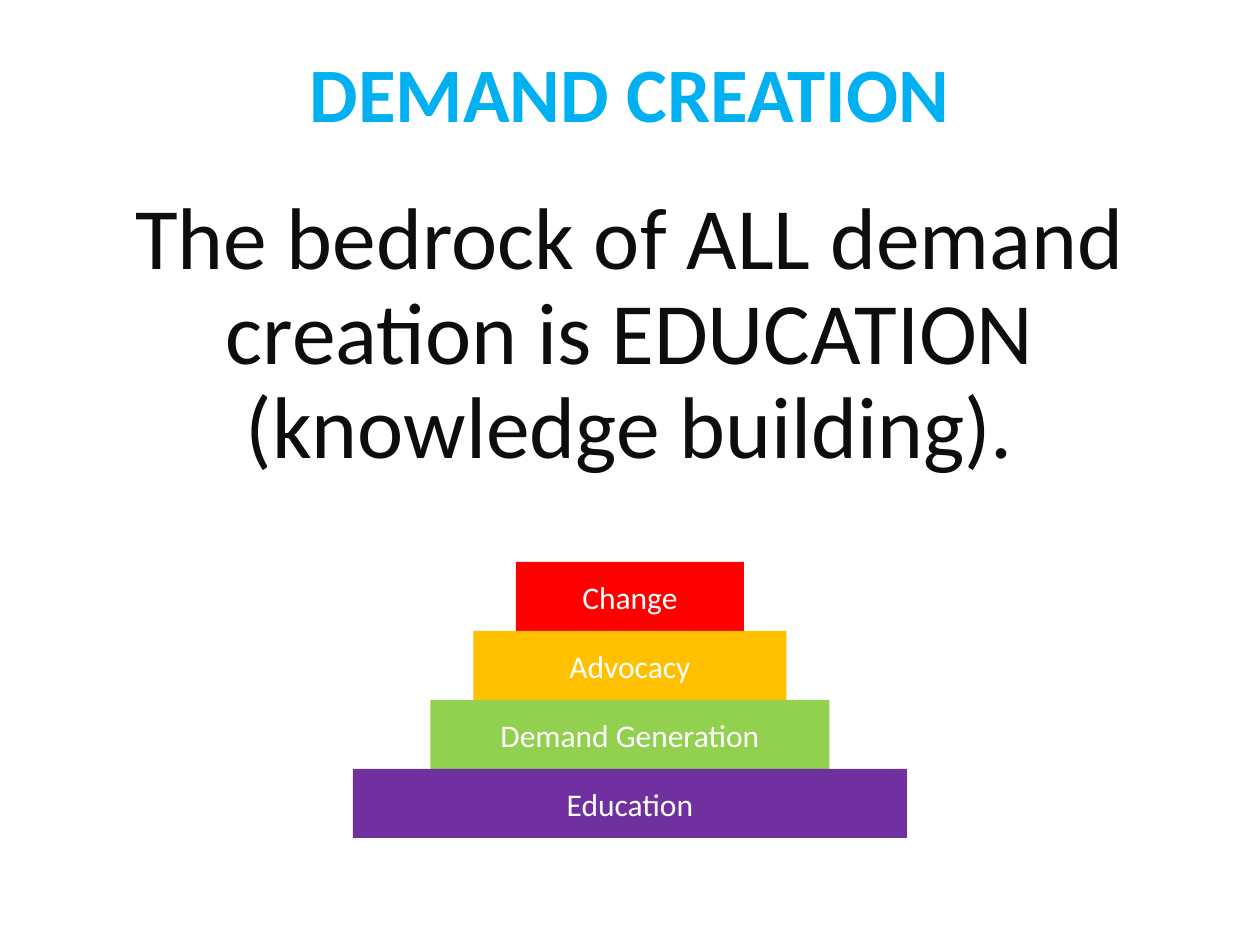
from dataclasses import dataclass

from pptx import Presentation
from pptx.dml.color import RGBColor
from pptx.enum.shapes import MSO_SHAPE
from pptx.enum.text import MSO_ANCHOR, PP_ALIGN
from pptx.util import Pt

RECT = MSO_SHAPE.RECTANGLE
CENTER = PP_ALIGN.CENTER
TOP, MIDDLE = MSO_ANCHOR.TOP, MSO_ANCHOR.MIDDLE

SLIDE_W, SLIDE_H = 1260, 945
TITLE = "DEMAND CREATION"
STATEMENT = "The bedrock of ALL demand creation is EDUCATION (knowledge building)."
# Pyramid tiers from top to bottom: label, width in px, fill
TIERS = [
    ("Change", 228, "FF0000"),
    ("Advocacy", 313, "FFC000"),
    ("Demand Generation", 399, "92D050"),
    ("Education", 554, "7030A0"),
]
PYRAMID_TOP, TIER_H = 562, 69


@dataclass(frozen=True)
class Theme:
    font: str = "Calibri"
    title: str = "00B0F0"
    body: str = "0D0D0D"
    label: str = "FFFFFF"
    title_size: int = 44
    body_size: int = 50
    label_size: int = 18


THEME = Theme()


def px(n):
    return round(n * 914400 / 126)


def set_text(sp, text, size, color, anchor=MIDDLE, spacing=1.0, bold=False):
    tf = sp.text_frame
    tf.word_wrap = True
    tf.vertical_anchor = anchor
    p = tf.paragraphs[0]
    p.text = text
    p.alignment = CENTER
    p.line_spacing = spacing
    p.font.name = THEME.font
    p.font.size = Pt(size)
    p.font.bold = bold
    p.font.color.rgb = RGBColor.from_string(color)


def centered(width, top, height):
    """Bounds of a box centred across the slide."""
    return [px(n) for n in ((SLIDE_W - width) / 2, top, width, height)]


def add_tier(shapes, row, label, width, fill):
    sp = shapes.add_shape(RECT, *centered(width, PYRAMID_TOP + row * TIER_H, TIER_H))
    sp.shadow.inherit = False
    sp.fill.solid()
    sp.fill.fore_color.rgb = RGBColor.from_string(fill)
    sp.line.fill.background()
    set_text(sp, label, THEME.label_size, THEME.label)


def main():
    prs = Presentation()
    prs.slide_width, prs.slide_height = px(SLIDE_W), px(SLIDE_H)
    s = prs.slides.add_slide(prs.slide_layouts[6])

    title = s.shapes.add_textbox(*centered(1134, 38, 120))
    set_text(title, TITLE, THEME.title_size, THEME.title, spacing=0.9, bold=True)
    statement = s.shapes.add_textbox(*centered(1180, 188, 370))
    set_text(statement, STATEMENT, THEME.body_size, THEME.body, TOP, 0.9)

    pyramid = s.shapes.add_group_shape()
    for row, tier in enumerate(TIERS):
        add_tier(pyramid.shapes, row, *tier)

    prs.save("out.pptx")


if __name__ == "__main__":
    main()
